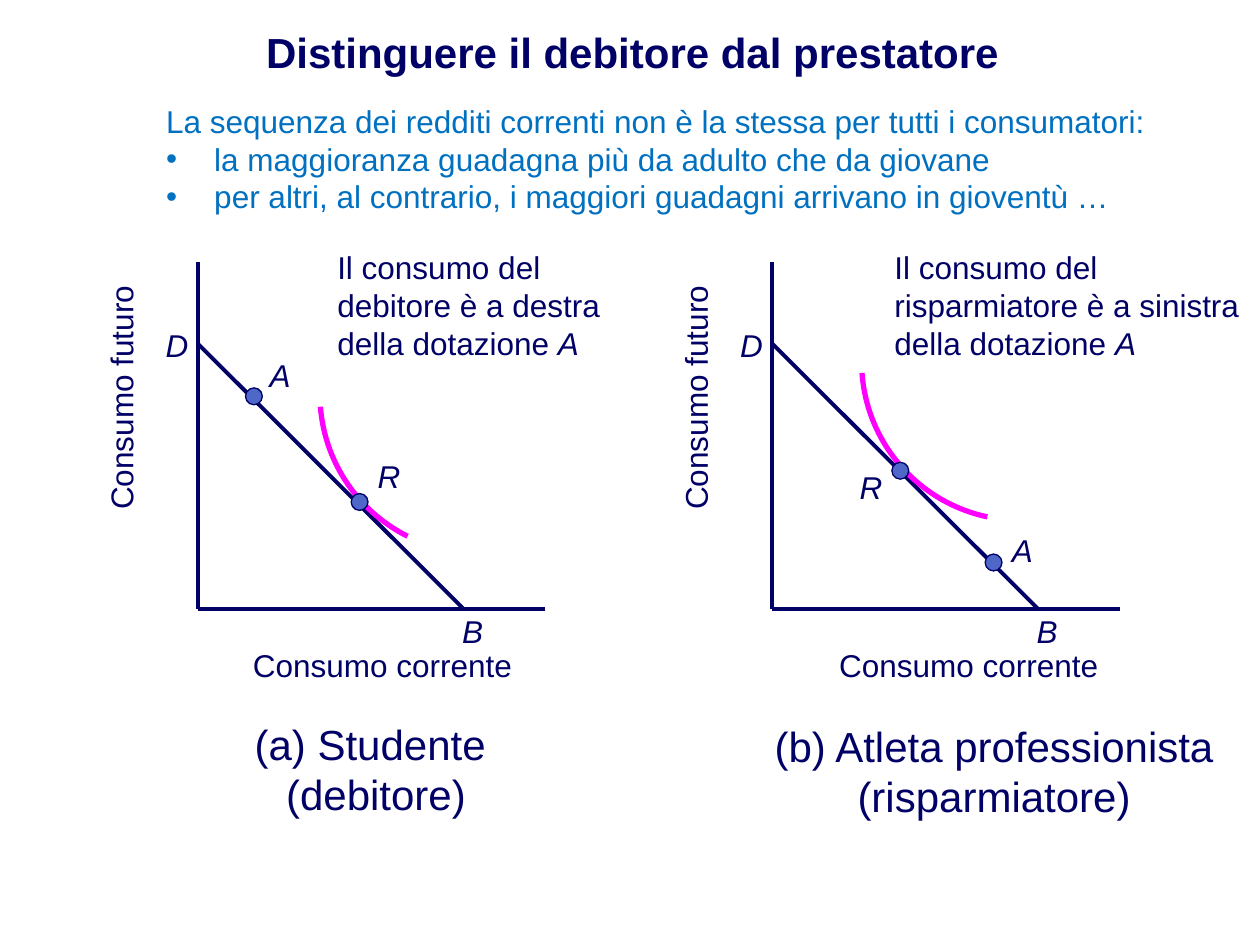
from dataclasses import dataclass

from lxml.etree import SubElement
from pptx import Presentation
from pptx.dml.color import RGBColor
from pptx.enum.shapes import MSO_CONNECTOR as Link, MSO_SHAPE as Form
from pptx.enum.text import MSO_ANCHOR as Anchor, PP_ALIGN as Align
from pptx.oxml.ns import qn
from pptx.util import Cm, Pt


@dataclass(frozen=True)
class Theme:
    font: str = "Arial"
    navy: RGBColor = RGBColor(0x00, 0x00, 0x66)
    blue: RGBColor = RGBColor(0x00, 0x70, 0xC0)
    dot: RGBColor = RGBColor(0x4E, 0x67, 0xC8)
    pink: RGBColor = RGBColor(0xFF, 0x00, 0xFF)
    large: Pt = Pt(24)
    small: Pt = Pt(18)


theme = Theme()
deck = Presentation()
deck.slide_width, deck.slide_height = Cm(25.4), Cm(19.05)
slide = deck.slides.add_slide(deck.slide_layouts[5])
shapes = slide.shapes


def write(place, text, size=theme.small, color=theme.navy,
          align=Align.CENTER, italic=False):
    """Add a text box at place (left, top, width, height in cm)."""
    box = shapes.add_textbox(*map(Cm, place))
    frame = box.text_frame
    frame.word_wrap = True
    frame.text = text
    for para in frame.paragraphs:
        para.alignment = align
        for run in para.runs:
            font = run.font
            font.name, font.size, font.italic = theme.font, size, italic
            font.color.rgb = color
    return box


def draw(start, end):
    line = shapes.add_connector(Link.STRAIGHT, *map(Cm, start + end))
    line.line.color.rgb = theme.navy
    line.line.width = Pt(2.25)
    SubElement(line._element.spPr, qn("a:effectLst"))


# Title
title = shapes.title
title.left, title.top, title.width, title.height = map(Cm, (0.1, 0.53, 25.3, 1.04))
title.text_frame.text = "Distinguere il debitore dal prestatore"
title.text_frame.vertical_anchor = Anchor.MIDDLE
head = title.text_frame.paragraphs[0]
head.alignment = Align.CENTER
font = head.runs[0].font
font.name, font.size, font.bold = theme.font, theme.large, True
font.color.rgb = theme.navy

# Introduction
intro = write(
    (3.1, 1.93, 20.4, 2.57),
    "La sequenza dei redditi correnti non è la stessa per tutti i consumatori:\n"
    "la maggioranza guadagna più da adulto che da giovane\n"
    "per altri, al contrario, i maggiori guadagni arrivano in gioventù …",
    color=theme.blue, align=Align.LEFT)
for para in intro.text_frame.paragraphs[1:]:
    props = para._p.get_or_add_pPr()
    props.set("marL", str(Cm(0.97)))
    props.set("indent", str(-Cm(0.97)))
    SubElement(props, qn("a:buFont"), typeface=theme.font)
    SubElement(props, qn("a:buChar"), char="•")

# Two panels; all lengths in cm, angles in degrees clockwise from the right
top, base, span = 5.28, 12.27, 7.0
reach, peak = 5.35, 6.93
radius, size = 3.2, 0.34
panels = [
    dict(x=3.99, center=7.71,
         hub=(9.65, 7.95), sweep=(116.6, 175.5),
         points=[("A", (5.12, 7.99), (4.8, 7.06)),
                 ("R", (7.25, 10.12), (6.99, 9.09))],
         note="Il consumo del debitore è a destra della dotazione ",
         spot=(6.55, 4.88, 6.35, 2.57),
         name="(a) Studente \v(debitore)", foot=(3.73, 14.35, 7.7, 2.31)),
    dict(x=15.57, center=19.53,
         hub=(20.57, 7.29), sweep=(102, 175.9),
         points=[("R", (18.15, 9.49), (16.71, 9.32)),
                 ("A", (20.03, 11.34), (19.76, 10.59))],
         note="Il consumo del risparmiatore è a sinistra della dotazione ",
         spot=(17.78, 4.88, 7.62, 2.57),
         name="(b) Atleta professionista\v(risparmiatore)",
         foot=(15.04, 14.4, 10, 2.31)),
]

for panel in panels:
    x = panel["x"]

    # Axes and budget line
    draw((x, top), (x, base))
    draw((x, base), (x + span, base))
    draw((x, peak), (x + reach, base))
    write((panel["center"] - 3.2, 12.9, 6.4, 1), "Consumo corrente")
    side = write((x - 5.16, 7.52, 7.2, 1), "Consumo futuro")
    side.rotation = 270

    # Indifference curve
    left, high = (c - radius for c in panel["hub"])
    curve = shapes.add_shape(Form.ARC, *map(Cm, (left, high, 2 * radius, 2 * radius)))
    curve.shadow.inherit = False
    for i, angle in enumerate(panel["sweep"]):
        curve.adjustments[i] = angle * 0.6  # unit: 100000 / 60000 degrees
    curve.fill.background()
    curve.line.color.rgb = theme.pink
    curve.line.width = Pt(3)

    # Points and letters
    tags = [("B", (x + 4.69, 12.22)), ("D", (x - 1.27, 6.44))]
    for letter, (cx, cy), spot in panel["points"]:
        dot = shapes.add_shape(
            Form.OVAL, *map(Cm, (cx - size / 2, cy - size / 2, size, size)))
        dot.shadow.inherit = False
        dot.fill.solid()
        dot.fill.fore_color.rgb = theme.dot
        dot.line.color.rgb = theme.navy
        dot.line.width = Pt(0.75)
        tags.append((letter, spot))
    for letter, spot in tags:
        write((*spot, 1.7, 1), letter, italic=True)

    # Note and caption
    note = write(panel["spot"], panel["note"], align=Align.LEFT)
    run = note.text_frame.paragraphs[0].add_run()
    run.text = "A"
    run.font.name, run.font.size, run.font.italic = theme.font, theme.small, True
    run.font.color.rgb = theme.navy
    write(panel["foot"], panel["name"], size=theme.large)

deck.save("out.pptx")
